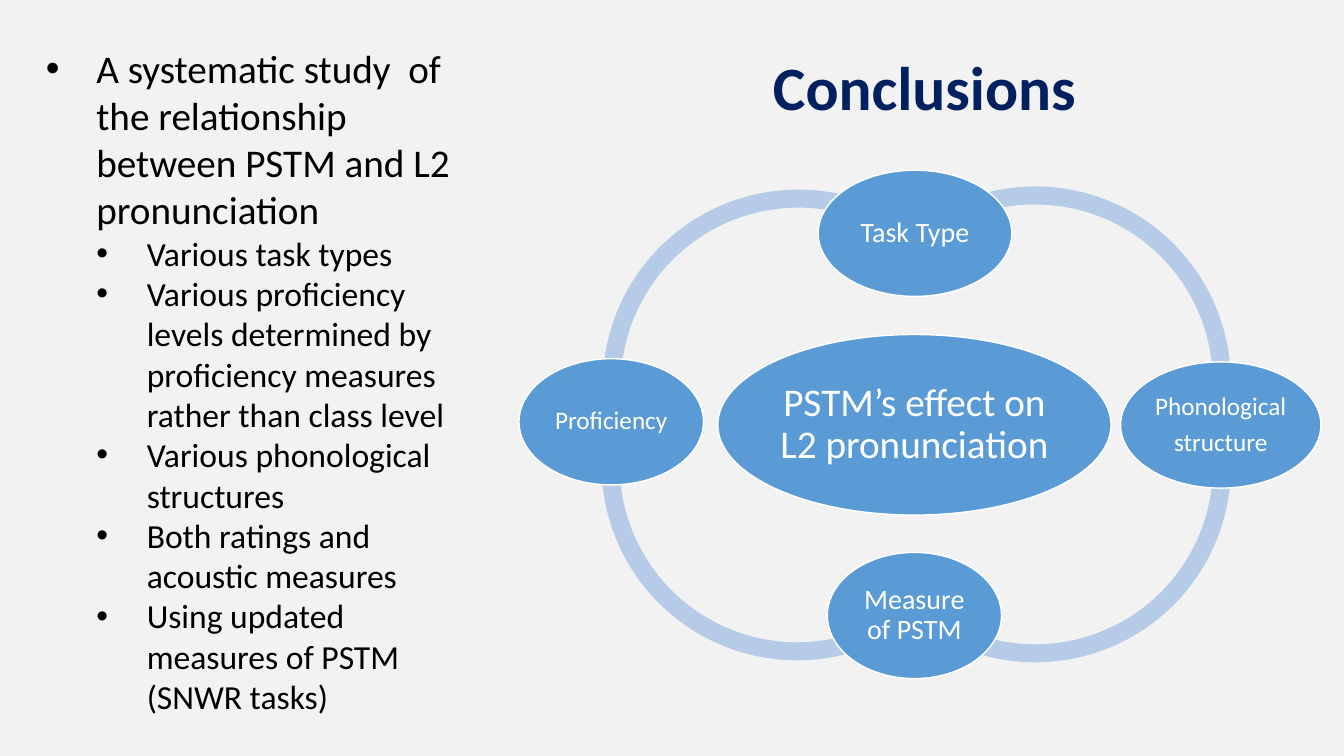
from lxml import etree
from pptx import Presentation
from pptx.dml.color import RGBColor
from pptx.enum.shapes import MSO_SHAPE
from pptx.enum.text import MSO_ANCHOR, MSO_AUTO_SIZE, PP_ALIGN
from pptx.oxml.ns import qn
from pptx.util import Cm, Pt

ARC, ELLIPSE = MSO_SHAPE.BLOCK_ARC, MSO_SHAPE.OVAL
MIDDLE, CENTER, LEFT = MSO_ANCHOR.MIDDLE, PP_ALIGN.CENTER, PP_ALIGN.LEFT
FIT_SHAPE = MSO_AUTO_SIZE.SHAPE_TO_FIT_TEXT
COLORS = {
    "background": "F2F2F2",
    "ring": "B5CBE7",
    "node": "5B9BD5",
    "white": "FFFFFF",
    "black": "000000",
    "title": "002060",
}
FONT = "Calibri"
BULLET_INDENT = 1.27
DEGREE = 0.6  # one degree in the unit of shape adjustments


def color(name):
    return RGBColor.from_string(COLORS[name])


def write_paragraph(frame, text, size, ink, bold=False, align=LEFT,
                    spacing=1.0, after=0, bullet_level=None):
    """Fill the empty first paragraph of the frame, or add one after the last."""
    last = frame.paragraphs[-1]
    paragraph = frame.add_paragraph() if last.runs else last
    paragraph.alignment = align
    paragraph.line_spacing = spacing
    paragraph.space_after = Pt(after)
    run = paragraph.add_run()
    run.text = text
    run.font.name = FONT
    run.font.size = Pt(size)
    run.font.bold = bold
    run.font.color.rgb = color(ink)
    if bullet_level is not None:
        paragraph.level = bullet_level
        properties = paragraph._p.get_or_add_pPr()
        properties.set("marL", str(Cm(BULLET_INDENT * (bullet_level + 1))))
        properties.set("indent", str(-Cm(BULLET_INDENT)))
        etree.SubElement(properties, qn("a:buFont")).set("typeface", "Arial")
        etree.SubElement(properties, qn("a:buChar")).set("char", "•")


presentation = Presentation()
presentation.slide_width = Cm(33.87)
presentation.slide_height = Cm(19.05)
slide = presentation.slides.add_slide(presentation.slide_layouts[6])
slide.background.fill.solid()
slide.background.fill.fore_color.rgb = color("background")

# Ring behind the nodes: left, top, start and end angle in degrees, clockwise
ring_size = Cm(9.86)
ring_arcs = [
    (15.19, 4.78, 168.76, 307.58),
    (15.16, 6.78, 51.95, 193.01),
    (21.16, 6.83, 347.18, 128.91),
    (21.16, 4.7, 231.09, 12.82),
]
for left, top, start, end in ring_arcs:
    arc = slide.shapes.add_shape(ARC, Cm(left), Cm(top), ring_size, ring_size)
    arc.shadow.inherit = False
    arc.adjustments[0] = start * DEGREE
    arc.adjustments[1] = end * DEGREE
    arc.adjustments[2] = 0.046
    arc.fill.solid()
    arc.fill.fore_color.rgb = color("ring")
    arc.line.fill.background()

# Nodes: left, top, width, height, text size, paragraphs
nodes = [
    (18.09, 8.43, 9.91, 4.55, 28, ["PSTM’s effect on L2 pronunciation"]),
    (20.62, 4.29, 4.88, 3.18, 20, ["Task Type"]),
    (28.24, 9.12, 5.05, 3.18, 18, ["Phonological", "structure"]),
    (20.85, 13.92, 4.39, 3.18, 20, ["Measure of PSTM"]),
    (13.08, 9.04, 4.65, 3.18, 18, ["Proficiency"]),
]
for left, top, width, height, size, lines in nodes:
    node = slide.shapes.add_shape(ELLIPSE, Cm(left), Cm(top), Cm(width), Cm(height))
    node.shadow.inherit = False
    node.fill.solid()
    node.fill.fore_color.rgb = color("node")
    node.line.color.rgb = color("white")
    node.line.width = Pt(1)
    frame = node.text_frame
    frame.word_wrap = True
    frame.vertical_anchor = MIDDLE
    frame.margin_left = frame.margin_right = Cm(0.08)
    frame.margin_top = frame.margin_bottom = Cm(0.08)
    for line in lines:
        write_paragraph(frame, line, size=size, ink="white", align=CENTER,
                        spacing=0.9, after=0.35 * size)

findings = [
    (0, "A systematic study  of the relationship between PSTM and L2 pronunciation"),
    (1, "Various task types"),
    (1, "Various proficiency levels determined by proficiency measures rather than class level"),
    (1, "Various phonological structures"),
    (1, "Both ratings and acoustic measures"),
    (1, "Using updated measures of PSTM (SNWR tasks)"),
]
findings_box = slide.shapes.add_textbox(Cm(0.91), Cm(0.99), Cm(11.48), Cm(17.35))
findings_box.text_frame.word_wrap = True
findings_box.text_frame.auto_size = FIT_SHAPE
for level, text in findings:
    write_paragraph(findings_box.text_frame, text, size=28 - 4 * level,
                    ink="black", bullet_level=level)

title_box = slide.shapes.add_textbox(Cm(19.23), Cm(0.43), Cm(8.46), Cm(3.68))
title_box.text_frame.word_wrap = True
title_box.text_frame.vertical_anchor = MIDDLE
write_paragraph(title_box.text_frame, "Conclusions", size=44, ink="title",
                bold=True, spacing=0.9)

presentation.save("out.pptx")
